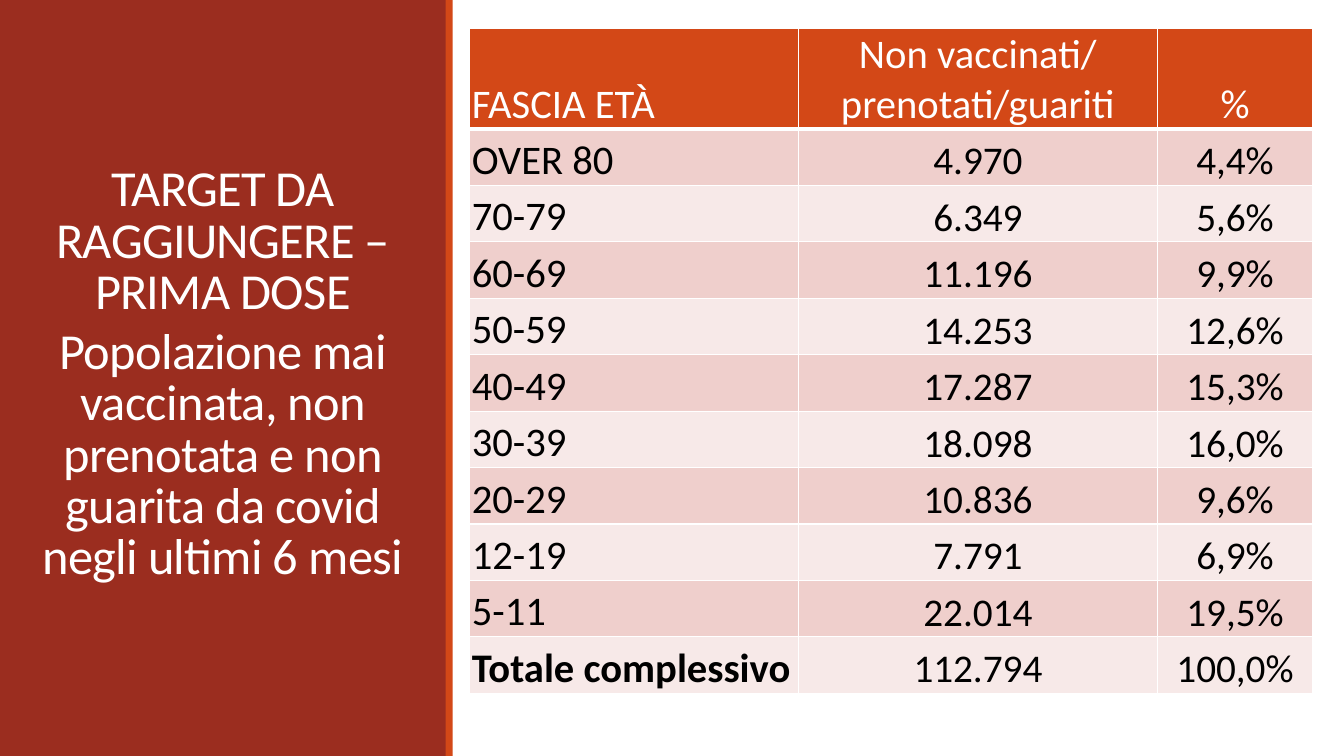
from lxml import etree
from pptx import Presentation
from pptx import util as u
from pptx.dml import color
from pptx.enum import shapes, text
from pptx.oxml import ns

COLORS = {
    "white": "FFFFFF",
    "black": "000000",
    "brick": "9B2D1F",
    "orange": "D34817",
    "band_dark": "EFCFCC",
    "band_light": "F7E9E8",
}
TITLE = [
    "TARGET DA RAGGIUNGERE – PRIMA DOSE",
    "Popolazione mai vaccinata, non prenotata e non guarita da covid negli ultimi 6 mesi",
]
ROWS = [
    ("FASCIA ETÀ", "Non vaccinati/\nprenotati/guariti", "%"),
    ("OVER 80", "4.970", "4,4%"),
    ("70-79", "6.349", "5,6%"),
    ("60-69", "11.196", "9,9%"),
    ("50-59", "14.253", "12,6%"),
    ("40-49", "17.287", "15,3%"),
    ("30-39", "18.098", "16,0%"),
    ("20-29", "10.836", "9,6%"),
    ("12-19", "7.791", "6,9%"),
    ("5-11", "22.014", "19,5%"),
    ("Totale complessivo", "112.794", "100,0%"),
]
COL_WIDTHS = [3.26, 3.56, 1.54]
HEADER_HEIGHT = 1.0


def rgb(name):
    return color.RGBColor.from_string(COLORS[name])


def write(tf, lines, size, fill, align="CENTER", bold=False, line=None, after=0, tracking=None):
    for i, content in enumerate(lines):
        p = tf.paragraphs[0] if i == 0 else tf.add_paragraph()
        p.alignment = getattr(text.PP_ALIGN, align)
        p.space_after = u.Pt(after)
        if line:
            p.line_spacing = line
        r = p.add_run()
        r.text = content
        r.font.name = "Calibri"
        r.font.size = u.Pt(size)
        r.font.bold = bold
        r.font.color.rgb = rgb(fill)
        if tracking:
            r._r.get_or_add_rPr().set("spc", str(int(tracking * 100)))


def add_bar(s, x, y, w, h, fill):
    sp = s.shapes.add_shape(shapes.MSO_SHAPE.RECTANGLE, *map(u.Inches, (x, y, w, h)))
    sp.shadow.inherit = False
    sp.fill.solid()
    sp.fill.fore_color.rgb = rgb(fill)
    sp.line.fill.background()


def set_borders(cell, bottom):
    tcPr = cell._tc.get_or_add_tcPr()
    for i, (side, width) in enumerate({"lnL": 1, "lnR": 1, "lnT": 1, "lnB": bottom}.items()):
        ln = etree.Element(ns.qn(f"a:{side}"), w=str(u.Pt(width)))
        fill = etree.SubElement(ln, ns.qn("a:solidFill"))
        etree.SubElement(fill, ns.qn("a:srgbClr"), val=COLORS["white"])
        tcPr.insert(i, ln)


def title_panel(s, x, y, w, h):
    add_bar(s, x, y, w, h, "brick")
    add_bar(s, x + w - 0.01, y, 0.07, h, "orange")
    sp = s.shapes.add_textbox(*map(u.Inches, (x + 0.3, y + 0.57, w - 0.61, h - 1.19)))
    tf = sp.text_frame
    tf.word_wrap = True
    tf.vertical_anchor = text.MSO_ANCHOR.MIDDLE
    write(tf, TITLE, 36, "white", line=0.85, after=6, tracking=-0.5)


def age_table(s, x, y, w, h):
    frame = s.shapes.add_table(len(ROWS), len(COL_WIDTHS), *map(u.Inches, (x, y, w, h)))
    table = frame.table
    for column, width in zip(table.columns, COL_WIDTHS):
        column.width = u.Inches(width)
    row_height = (h - HEADER_HEIGHT) / (len(ROWS) - 1)
    for i, values in enumerate(ROWS):
        header = i == 0
        table.rows[i].height = u.Inches(HEADER_HEIGHT if header else row_height)
        band = "orange" if header else "band_dark" if i % 2 else "band_light"
        for j, value in enumerate(values):
            label = header or j == 0
            cell = table.cell(i, j)
            cell.fill.solid()
            cell.fill.fore_color.rgb = rgb(band)
            cell.vertical_anchor = text.MSO_ANCHOR.BOTTOM
            cell.margin_left = cell.margin_right = cell.margin_top = u.Inches(0.02 if label else 0.01)
            cell.margin_bottom = 0
            set_borders(cell, 3 if header else 1)
            write(
                cell.text_frame,
                value.split("\n"),
                29 if label else 28,
                "white" if header else "black",
                align="CENTER" if j else "LEFT",
                bold=i == len(ROWS) - 1 and j == 0,
            )


def main():
    prs = Presentation()
    prs.slide_width, prs.slide_height = u.Inches(13.33), u.Inches(7.5)
    s = prs.slides.add_slide(prs.slide_layouts[6])
    s.background.fill.solid()
    s.background.fill.fore_color.rgb = rgb("white")
    title_panel(s, 0, 0, 4.43, 7.5)
    age_table(s, 4.66, 0.28, sum(COL_WIDTHS), 6.6)
    prs.save("out.pptx")


if __name__ == "__main__":
    main()
